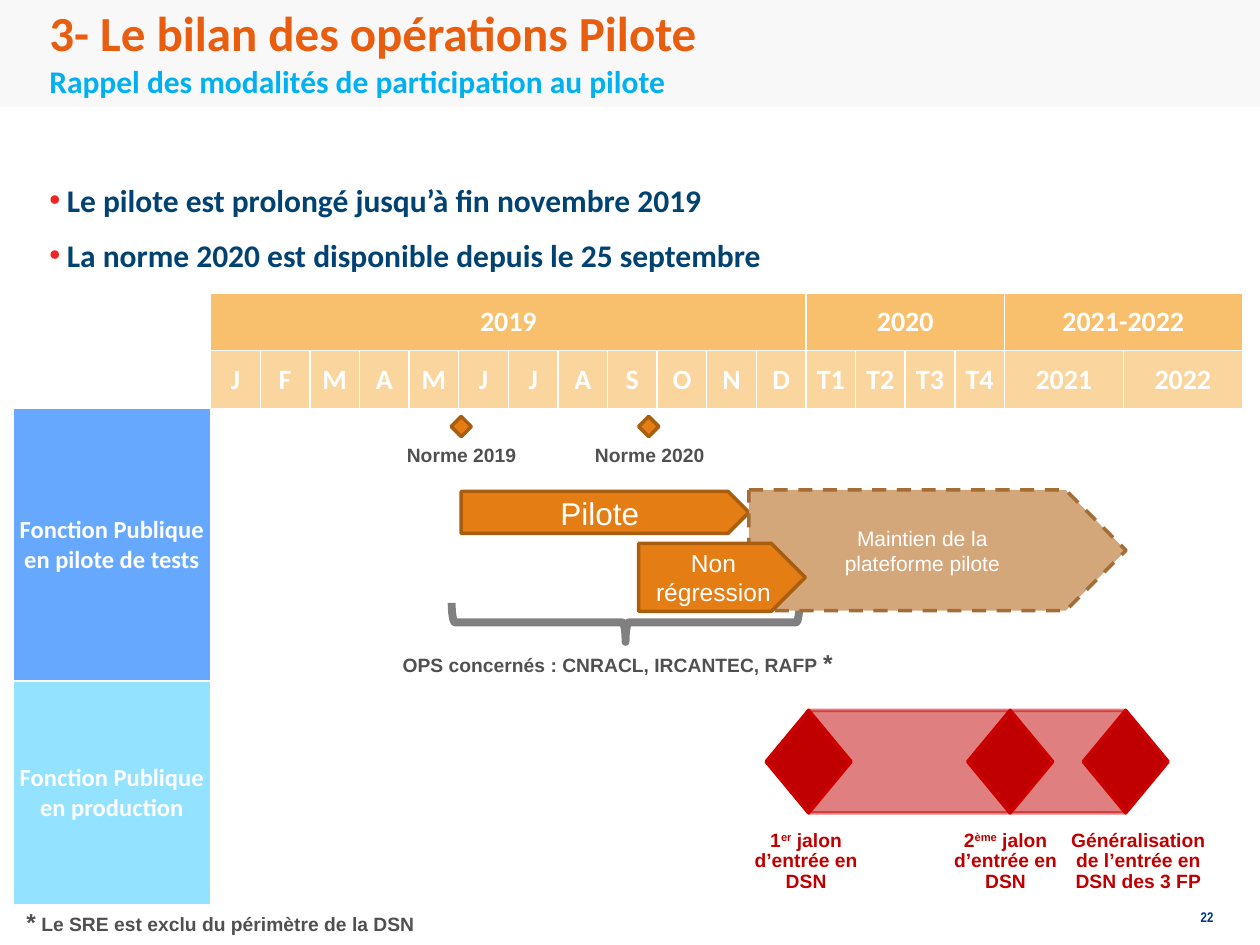
"""Build the slide on the pilot phase: bullets, planning table and milestones."""
from dataclasses import dataclass
from typing import Optional

from lxml import etree
from pptx import Presentation
from pptx.dml.color import RGBColor
from pptx.enum import dml, shapes, text
from pptx.oxml.ns import qn
from pptx.util import Pt

COLORS = {
    "white": "FFFFFF", "band": "F8F8F8", "title": "E95D0F", "subtitle": "00B0F0",
    "page": "003882", "body": "004272", "bullet": "EE2525", "year": "F8C06D",
    "period": "FAD59D", "tests": "67A8FF", "production": "93E2FF",
    "pilot": "E47E14", "pilot_line": "A95D0F", "upkeep": "D4A77B",
    "upkeep_line": "A46D36", "grey": "505050", "brace": "808080",
    "milestone": "C00000", "milestone_line": "CC0000",
}
SHAPE = shapes.MSO_SHAPE
ALIGN = text.PP_ALIGN
ANCHOR = text.MSO_ANCHOR


@dataclass
class Run:
    text: str
    size: Optional[float] = None
    color: Optional[str] = None
    raised: bool = False


@dataclass
class Mark:
    kind: int
    box: tuple
    fill: Optional[str]
    line: Optional[str] = None
    width: float = 2
    dash: bool = False
    opacity: int = 100
    rotation: float = 0
    lines: tuple = ()
    size: float = 12


@dataclass
class Label:
    box: tuple
    runs: list
    color: str = "grey"
    align: int = ALIGN.CENTER


def rgb(name: str) -> RGBColor:
    return RGBColor.from_string(COLORS[name])


def add_bullet(paragraph, color: str, indent: float) -> None:
    props = paragraph._p.get_or_add_pPr()
    props.set("marL", str(Pt(indent)))
    props.set("indent", str(-Pt(indent)))
    tint = etree.SubElement(props, qn("a:buClr"))
    etree.SubElement(tint, qn("a:srgbClr"), val=COLORS[color])
    etree.SubElement(props, qn("a:buFont"), typeface="Arial")
    etree.SubElement(props, qn("a:buChar"), char="•")


def write(frame, paragraphs, *, size=11, color="white", font="Arial", bold=False,
          align=ALIGN.CENTER, anchor=ANCHOR.TOP, leading=1.0, before=0, after=0,
          bullet=None) -> None:
    """Fill a text frame with paragraphs, each a list of runs."""
    frame.word_wrap = True
    frame.vertical_anchor = anchor
    for index, runs in enumerate(paragraphs):
        paragraph = frame.add_paragraph() if index else frame.paragraphs[0]
        if bullet:
            add_bullet(paragraph, bullet, 10)
        paragraph.alignment = align
        paragraph.line_spacing = leading
        paragraph.space_before = Pt(before if index else 0)
        paragraph.space_after = Pt(after)
        for part in runs:
            points = part.size or size
            for number, line in enumerate(part.text.split("\n")):
                if number:
                    paragraph.add_line_break()
                    etree.SubElement(paragraph._p[-1], qn("a:rPr"), sz=str(points * 100))
                if not line:
                    continue
                run = paragraph.add_run()
                run.text = line
                run.font.size, run.font.bold, run.font.name = Pt(points), bold, font
                run.font.color.rgb = rgb(part.color or color)
                if part.raised:
                    run._r.get_or_add_rPr().set("baseline", "30000")


def place(shape, box: tuple) -> None:
    shape.left, shape.top, shape.width, shape.height = map(Pt, box)


def draw_mark(slide, mark: Mark):
    shape = slide.shapes.add_shape(mark.kind, *map(Pt, mark.box))
    shape.shadow.inherit = False
    shape.rotation = mark.rotation
    if mark.fill:
        shape.fill.solid()
        shape.fill.fore_color.rgb = rgb(mark.fill)
    else:
        shape.fill.background()
    if mark.line:
        shape.line.color.rgb = rgb(mark.line)
        shape.line.width = Pt(mark.width)
        if mark.dash:
            shape.line.dash_style = dml.MSO_LINE.DASH
    else:
        shape.line.fill.background()
    if mark.opacity < 100:
        for tint in shape._element.spPr.iter(qn("a:srgbClr")):
            etree.SubElement(tint, qn("a:alpha"), val=str(mark.opacity * 1000))
    if mark.lines:
        write(shape.text_frame, [[Run(line)] for line in mark.lines],
              size=mark.size, anchor=ANCHOR.MIDDLE)
    return shape


def draw_label(slide, label: Label) -> None:
    box = slide.shapes.add_textbox(*map(Pt, label.box))
    write(box.text_frame, [label.runs], color=label.color, bold=True,
          align=label.align, leading=0.9, after=6)


def border_cell(cell) -> None:
    props = cell._tc.get_or_add_tcPr()
    for index, side in enumerate(("a:lnL", "a:lnR", "a:lnT", "a:lnB")):
        line = etree.Element(qn(side), w=str(Pt(1)))
        fill = etree.SubElement(line, qn("a:solidFill"))
        etree.SubElement(fill, qn("a:srgbClr"), val=COLORS["white"])
        props.insert(index, line)


def fill_cell(cell, words: str, color: str, size: float = 16) -> None:
    cell.fill.solid()
    cell.fill.fore_color.rgb = rgb(color)
    cell.margin_left = cell.margin_right = cell.margin_top = Pt(0.7)
    cell.margin_bottom = 0
    cell.vertical_anchor = ANCHOR.MIDDLE
    write(cell.text_frame, [[Run(words)]], size=size, font="Calibri", bold=True)


def draw_planning(slide) -> None:
    widths = [113] + [28.35] * 16 + [68] * 2
    heights = [33, 33, 156, 127.5]
    table = slide.shapes.add_table(len(heights), len(widths), Pt(7.4), Pt(167.3),
                                   Pt(sum(widths)), Pt(sum(heights))).table
    table.first_row = table.horz_banding = False
    for column, width in zip(table.columns, widths):
        column.width = Pt(width)
    for row, height in zip(table.rows, heights):
        row.height = Pt(height)
    for cell in table.iter_cells():
        cell.fill.background()
        border_cell(cell)
    start = 1
    for year, span in (("2019", 12), ("2020", 4), ("2021-2022", 2)):
        table.cell(0, start).merge(table.cell(0, start + span - 1))
        fill_cell(table.cell(0, start), year, "year")
        start += span
    periods = [*"JFMAMJJASOND", "T1", "T2", "T3", "T4", "2021", "2022"]
    for column, period in enumerate(periods, 1):
        fill_cell(table.cell(1, column), period, "period")
    fill_cell(table.cell(2, 0), "Fonction Publique\nen pilote de tests", "tests", 14)
    fill_cell(table.cell(3, 0), "Fonction Publique\nen production", "production", 14)


def main() -> None:
    deck = Presentation()
    deck.slide_width, deck.slide_height = Pt(720), Pt(540)
    slide = deck.slides.add_slide(deck.slide_layouts[1])
    band = draw_mark(slide, Mark(SHAPE.RECTANGLE, (0, 0, 720, 61), "band"))
    slide.shapes._spTree.insert(2, band._element)

    heading, points = slide.placeholders
    place(heading, (21, -2, 596, 51))
    place(points, (21, 102, 679, 377))
    heading.text_frame.auto_size = points.text_frame.auto_size = text.MSO_AUTO_SIZE.NONE
    write(heading.text_frame,
          [[Run("3- Le bilan des opérations Pilote\n", 28),
            Run("Rappel des modalités de participation au pilote", 18, "subtitle")]],
          color="title", font="Calibri", bold=True, align=ALIGN.LEFT)
    write(points.text_frame,
          [[Run("Le pilote est prolongé jusqu’à fin novembre 2019")],
           [Run("La norme 2020 est disponible depuis le 25 septembre")]],
          size=18, color="body", font="Calibri", bold=True, align=ALIGN.JUSTIFY,
          leading=0.9, before=6, after=6, bullet="bullet")
    page = slide.shapes.add_textbox(Pt(533), Pt(515.5), Pt(167.5), Pt(24))
    write(page.text_frame, [[Run("22")]], size=8, color="page", font="Arial Narrow",
          bold=True, align=ALIGN.RIGHT)

    draw_planning(slide)
    pilot = ("pilot", "pilot_line")
    milestone = ("milestone", "milestone_line")
    marks = [
        *(Mark(SHAPE.DIAMOND, (x, 238, 11.5, 11.5), *pilot) for x in (257.8, 365)),
        Mark(SHAPE.PENTAGON, (263.5, 280.8, 164.5, 24), *pilot, lines=("Pilote",), size=18),
        Mark(SHAPE.RIGHT_BRACE, (346.3, 256.3, 22.3, 198.7), None, "brace", 4.5, rotation=90),
        Mark(SHAPE.RECTANGLE, (462, 406, 181.5, 58.5), *milestone, opacity=50),
        Mark(SHAPE.PENTAGON, (428, 280, 215.5, 69), "upkeep", "upkeep_line", dash=True,
             lines=("Maintien de la", "plateforme pilote")),
        Mark(SHAPE.PENTAGON, (365, 310.5, 95.2, 38.8), *pilot,
             lines=("Non régression",), size=14),
        *(Mark(SHAPE.DIAMOND, (x, 406, 48.5, 58.5), *milestone) for x in (619, 553, 437.8)),
    ]
    for mark in marks:
        draw_mark(slide, mark)

    entry = " jalon d’entrée en DSN"
    labels = [
        Label((223, 251.3, 81.5, 19.5), [Run("Norme 2019")]),
        Label((330.5, 251.3, 81.5, 19.5), [Run("Norme 2020")]),
        Label((223, 368.5, 262, 22.5),
              [Run("OPS concernés : CNRACL, IRCANTEC, RAFP "), Run("*", 14)],
              align=ALIGN.JUSTIFY),
        Label((8, 516.5, 323, 22.5),
              [Run("*", 14), Run(" Le SRE est exclu du périmètre de la DSN")],
              align=ALIGN.JUSTIFY),
        Label((416, 471, 89.3, 43), [Run("1"), Run("er", raised=True), Run(entry)], "milestone"),
        Label((530, 471, 89.3, 43), [Run("2"), Run("ème", raised=True), Run(entry)], "milestone"),
        Label((597.5, 471, 106, 43), [Run("Généralisation de l’entrée en DSN des 3 FP")],
              "milestone"),
    ]
    for label in labels:
        draw_label(slide, label)
    deck.save("out.pptx")


if __name__ == "__main__":
    main()
